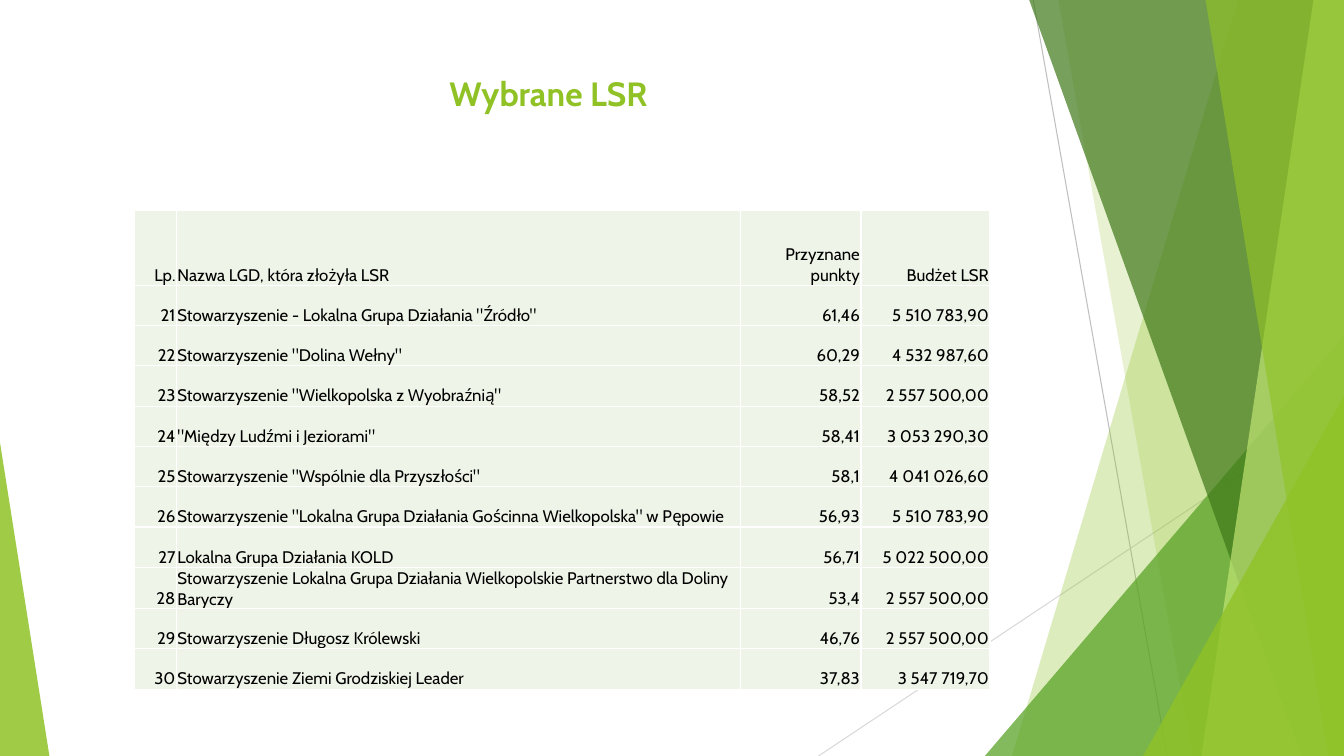
import pptx
import pptx.dml.color
import pptx.enum.shapes
import pptx.enum.text
import pptx.oxml.ns
import pptx.util
from lxml import etree

COLORS = {
    "lime": "90C226", "green": "54A021", "forest": "3F7819", "pale": "C0E474",
    "grey": "BFBFBF", "mist": "D9D9D9", "cell": "EEF4E8", "white": "FFFFFF", "black": "000000",
}
FONT = "Cabin"
WIDTH, HEIGHT = pptx.util.Inches(13.333), pptx.util.Inches(7.5)
TRIANGLE = pptx.enum.shapes.MSO_SHAPE.ISOSCELES_TRIANGLE
LEFT, CENTER, RIGHT = (getattr(pptx.enum.text.PP_ALIGN, side) for side in ("LEFT", "CENTER", "RIGHT"))
ANCHOR = pptx.enum.text.MSO_ANCHOR

TITLE_FONT = {"name": FONT, "size": pptx.util.Pt(24), "bold": True}
TABLE_FONT = {"name": FONT, "size": pptx.util.Pt(12), "bold": False}
CELL_FORMAT = {
    "vertical_anchor": ANCHOR.BOTTOM, "margin_left": pptx.util.Inches(0.01),
    "margin_right": pptx.util.Inches(0.01), "margin_top": pptx.util.Inches(0.01), "margin_bottom": 0,
}

# Lengths are percent of the slide's width or height
COLUMN_WIDTHS = [3.15, 42, 8.93, 9.6]
COLUMN_ALIGNS = [RIGHT, LEFT, RIGHT, RIGHT]
HEADER_HEIGHT, ROW_HEIGHT = 9.87, 5.33
HEADER = ("Lp.", "Nazwa LGD, która złożyła LSR", "Przyznane punkty", "Budżet LSR")
FIRST_NUMBER = 21
GROUPS = [
    ('Stowarzyszenie - Lokalna Grupa Działania "Źródło"', "61,46", "5 510 783,90"),
    ('Stowarzyszenie "Dolina Wełny"', "60,29", "4 532 987,60"),
    ('Stowarzyszenie "Wielkopolska z Wyobraźnią"', "58,52", "2 557 500,00"),
    ('"Między Ludźmi i Jeziorami"', "58,41", "3 053 290,30"),
    ('Stowarzyszenie "Wspólnie dla Przyszłości"', "58,1", "4 041 026,60"),
    ('Stowarzyszenie "Lokalna Grupa Działania Gościnna Wielkopolska" w Pępowie', "56,93", "5 510 783,90"),
    ("Lokalna Grupa Działania KOLD", "56,71", "5 022 500,00"),
    ("Stowarzyszenie Lokalna Grupa Działania Wielkopolskie Partnerstwo dla Doliny Baryczy",
     "53,4", "2 557 500,00"),
    ("Stowarzyszenie Długosz Królewski", "46,76", "2 557 500,00"),
    ("Stowarzyszenie Ziemi Grodziskiej Leader", "37,83", "3 547 719,70"),
]


def across(share):
    return round(WIDTH * share / 100)


def down(share):
    return round(HEIGHT * share / 100)


def rgb(color):
    return pptx.dml.color.RGBColor.from_string(COLORS[color])


def child(parent, tag, **attributes):
    return etree.SubElement(parent, pptx.oxml.ns.qn(tag), **attributes)


def apply_format(target, values):
    for attribute, value in values.items():
        setattr(target, attribute, value)


def write(frame, text, align, font, color):
    paragraph = frame.paragraphs[0]
    paragraph.alignment = align
    run = paragraph.add_run()
    run.text = text
    apply_format(run.font, font)
    run.font.color.rgb = rgb(color)


def paint(shape, color, opacity):
    shape.shadow.inherit = False
    shape.line.fill.background()
    shape.fill.solid()
    shape.fill.fore_color.rgb = rgb(color)
    tint = shape._element.spPr.find(".//" + pptx.oxml.ns.qn("a:srgbClr"))
    child(tint, "a:alpha", val=str(opacity * 1000))


def add_ray(slide, start, end, color):
    ray = slide.shapes.add_connector(
        pptx.enum.shapes.MSO_CONNECTOR.STRAIGHT,
        across(start[0]), down(start[1]), across(end[0]), down(end[1]))
    ray.line.color.rgb = rgb(color)
    ray.line.width = pptx.util.Pt(0.75)
    child(ray._element.spPr, "a:effectLst")


def add_facet(slide, top_x, bottom_x, color, opacity):
    """Fill from a slanted left edge to the right side of the slide."""
    outline = slide.shapes.build_freeform(across(top_x), 0)
    outline.add_line_segments([(WIDTH, 0), (WIDTH, HEIGHT), (across(bottom_x), HEIGHT)], close=True)
    paint(outline.convert_to_shape(), color, opacity)


def add_corner(slide, left, top, right, apex, color, opacity):
    """Stand a right-angled triangle on the bottom of the slide."""
    corner = slide.shapes.add_shape(
        TRIANGLE, across(left), down(top), across(right - left), down(100 - top))
    corner.adjustments[0] = apex
    paint(corner, color, opacity)


def add_title(slide, text):
    title = slide.shapes.add_textbox(across(5.55), down(8.93), across(70.5), down(9.47))
    apply_format(title.text_frame, {"word_wrap": True, "vertical_anchor": ANCHOR.TOP})
    write(title.text_frame, text, CENTER, TITLE_FONT, "lime")


def add_borders(cell):
    properties = cell._tc.get_or_add_tcPr()
    for side in ("a:lnL", "a:lnR", "a:lnT", "a:lnB"):
        border = child(properties, side, w=str(pptx.util.Pt(1)))
        child(child(border, "a:solidFill"), "a:srgbClr", val=COLORS["white"])


def add_ranking(slide, rows):
    heights = [HEADER_HEIGHT] + [ROW_HEIGHT] * (len(rows) - 1)
    ranking = slide.shapes.add_table(
        len(rows), len(COLUMN_WIDTHS), across(9.98), down(27.87),
        across(sum(COLUMN_WIDTHS)), down(sum(heights))).table
    apply_format(ranking, {"first_row": False, "horz_banding": False})
    for column, width in zip(ranking.columns, COLUMN_WIDTHS):
        column.width = across(width)
    for row, height, texts in zip(ranking.rows, heights, rows):
        row.height = down(height)
        for cell, text, align in zip(row.cells, texts, COLUMN_ALIGNS):
            apply_format(cell, CELL_FORMAT)
            add_borders(cell)
            cell.fill.solid()
            cell.fill.fore_color.rgb = rgb("cell")
            write(cell.text_frame, text, align, TABLE_FONT, "black")


def main():
    deck = pptx.Presentation()
    apply_format(deck, {"slide_width": WIDTH, "slide_height": HEIGHT})
    slide = deck.slides.add_slide(deck.slide_layouts[6])

    # Green backdrop, from back to front
    add_ray(slide, (76.88, 0), (86.85, 100), "grey")
    add_ray(slide, (100, 53.73), (60.9, 100), "mist")
    add_facet(slide, 92.1, 75.3, "lime", 30)
    add_facet(slide, 78.75, 88.73, "lime", 20)
    add_corner(slide, 73.28, 44.4, 100, 1, "green", 72)
    add_facet(slide, 76.58, 96.83, "forest", 70)
    add_facet(slide, 97.73, 89.4, "pale", 70)
    add_facet(slide, 89.7, 98.85, "lime", 65)
    add_corner(slide, 85.05, 52.4, 100, 1, "lime", 80)
    add_corner(slide, 0, 58.53, 3.68, 0, "lime", 85)

    # Title and ranking
    add_title(slide, "Wybrane LSR")
    numbered = [(str(number), *group) for number, group in enumerate(GROUPS, FIRST_NUMBER)]
    add_ranking(slide, [HEADER, *numbered])

    deck.save("out.pptx")


if __name__ == "__main__":
    main()
